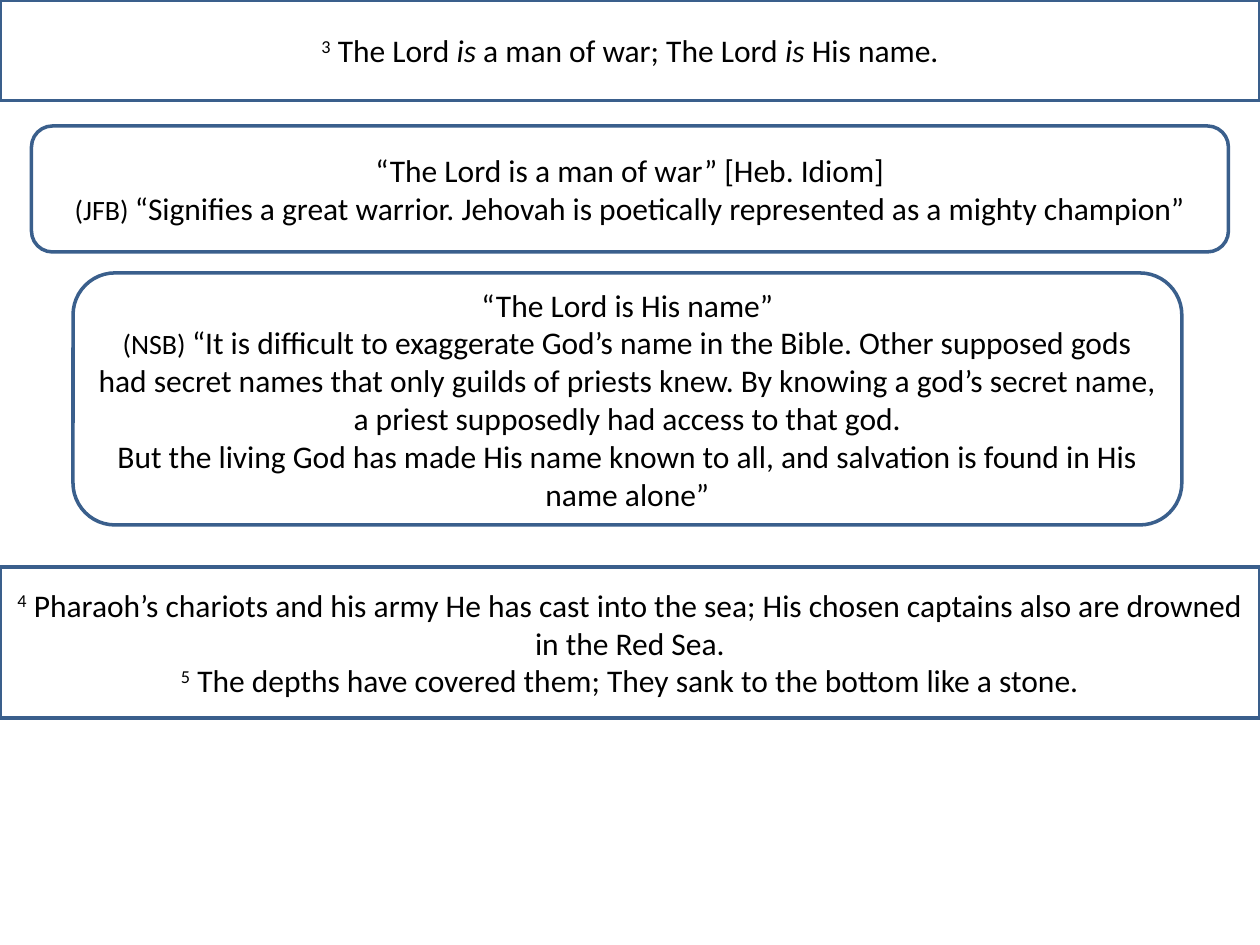
from pptx import Presentation
from pptx.dml.color import RGBColor
from pptx.enum import shapes, text
from pptx.util import Pt

VERSE = shapes.MSO_SHAPE.RECTANGLE
COMMENTARY = shapes.MSO_SHAPE.ROUNDED_RECTANGLE

PASSAGES = [
    (VERSE, (0, 0, 720, 57.6), [
        [("3", "super"), (" The Lord ", ""), ("is", "italic"),
         (" a man of war; The Lord ", ""), ("is", "italic"), (" His name.", "")],
    ]),
    (COMMENTARY, (18, 72, 684, 72), [
        [("“The Lord is a man of war” [Heb. Idiom]", "")],
        [("(JFB) ", "source"),
         ("“Signifies a great warrior. Jehovah is poetically represented "
          "as a mighty champion”", "")],
    ]),
    (VERSE, (0, 324, 720, 86.4), [
        [("4", "super"),
         (" Pharaoh’s chariots and his army He has cast into the sea; "
          "His chosen captains also are drowned in the Red Sea.", "")],
        [("5", "super"),
         (" The depths have covered them; They sank to the bottom like a stone.", "")],
    ]),
    (COMMENTARY, (41.76, 156, 633.6, 144), [
        [("“The Lord is His name”", "")],
        [("(NSB) ", "source"),
         ("“It is difficult to exaggerate God’s name in the Bible. Other supposed "
          "gods had secret names that only guilds of priests knew. By knowing a "
          "god’s secret name, a priest supposedly had access to that god.", "")],
        [("But the living God has made His name known to all, and salvation is "
          "found in His name alone”", "")],
    ]),
]


def colour(value):
    return RGBColor.from_string(value)


def add_phrase(paragraph, wording, style):
    phrase = paragraph.add_run()
    phrase.text = wording
    phrase.font.name = "Calibri"
    phrase.font.size = Pt(16 if style == "source" else 18)
    phrase.font.color.rgb = colour("000000")
    if style == "italic":
        phrase.font.italic = True
    if style == "super":
        phrase.font._element.set("baseline", "30000")


def add_passage(slide, outline, bounds, lines):
    passage = slide.shapes.add_shape(outline, *map(Pt, bounds))
    passage.shadow.inherit = False
    passage.fill.solid()
    passage.fill.fore_color.rgb = colour("FFFFFF")
    passage.line.color.rgb = colour("3A5F8C")
    passage.line.width = Pt(2)
    frame = passage.text_frame
    frame.word_wrap = True
    frame.vertical_anchor = text.MSO_ANCHOR.MIDDLE
    for index, phrases in enumerate(lines):
        paragraph = frame.add_paragraph() if index else frame.paragraphs[0]
        paragraph.alignment = text.PP_ALIGN.CENTER
        for wording, style in phrases:
            add_phrase(paragraph, wording, style)


def main():
    deck = Presentation()
    deck.slide_width, deck.slide_height = Pt(720), Pt(540)
    slide = deck.slides.add_slide(deck.slide_layouts[6])
    for outline, bounds, lines in PASSAGES:
        add_passage(slide, outline, bounds, lines)
    deck.save("out.pptx")


if __name__ == "__main__":
    main()
